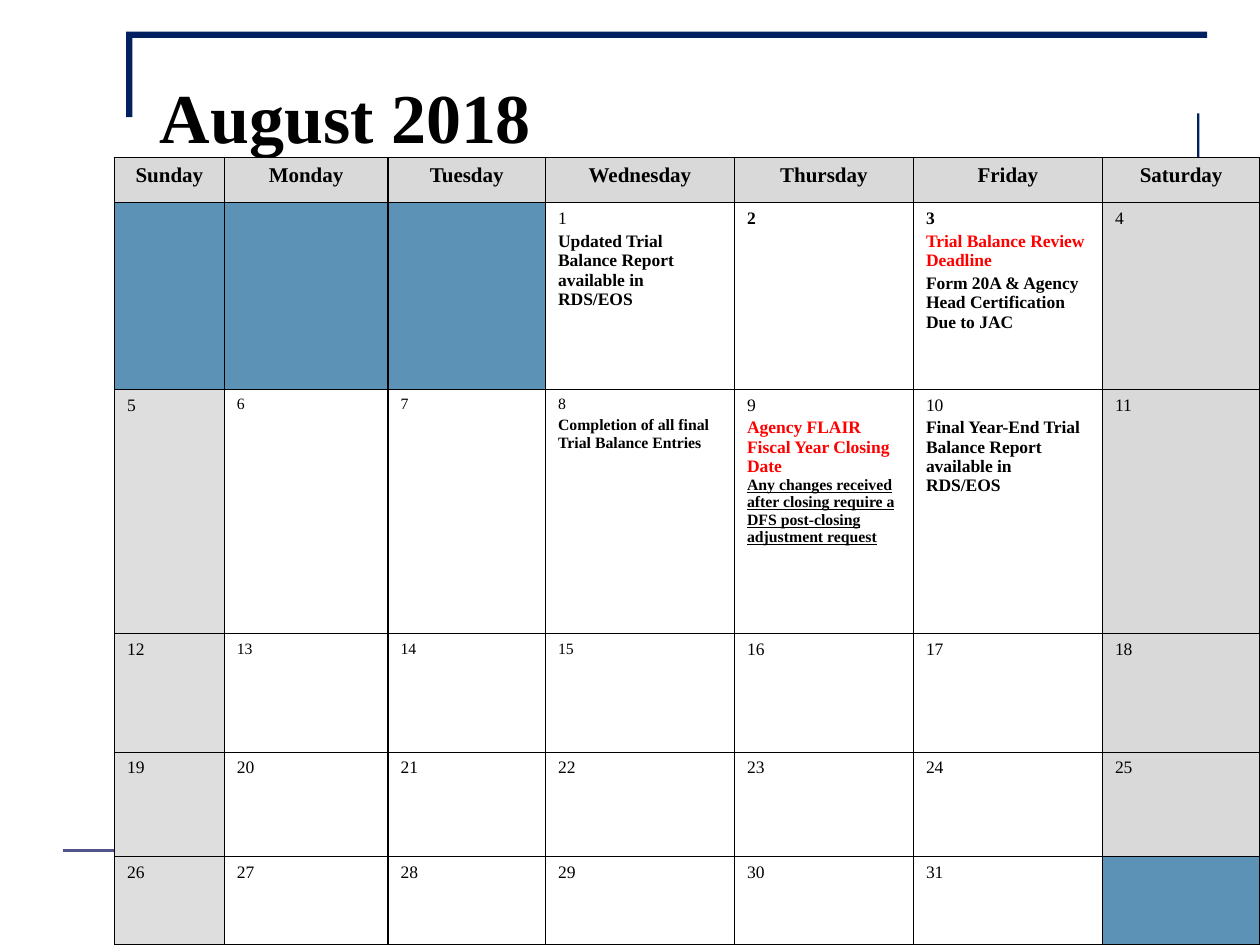
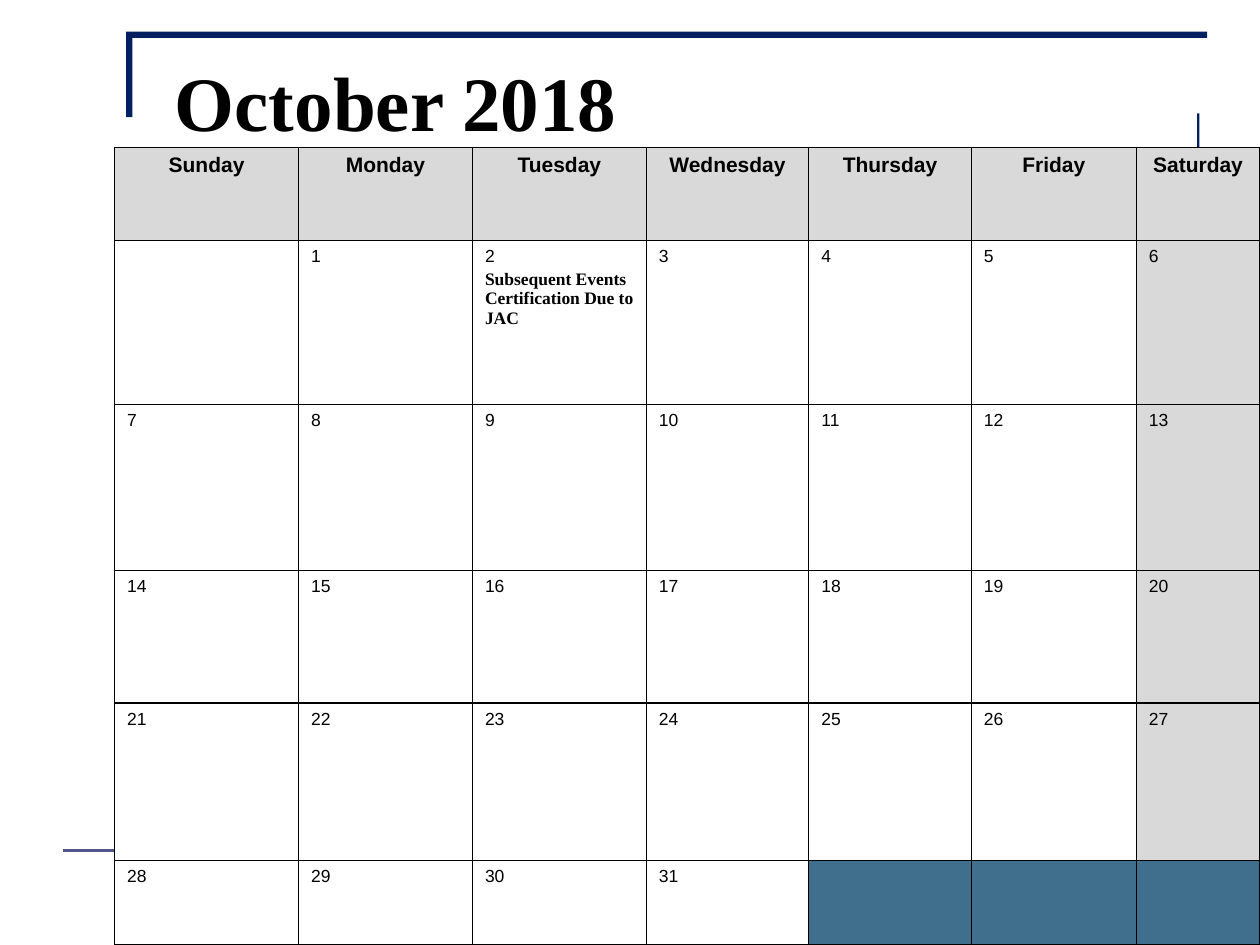
import pptx
import pptx.util
import pptx.dml.color
import pptx.enum.shapes
import pptx.enum.text
import pptx.oxml
import pptx.oxml.ns

Inches = pptx.util.Inches
Pt = pptx.util.Pt

COLORS = {
    "black": "000000", "white": "FFFFFF", "red": "FF0000",
    "navy": "002060", "footer": "53548A",
    "grey": "D9D9D9", "light grey": "DEDEDE",
    "blue": "5C92B5", "dark blue": "406F8D",
}
SERIF, SANS = "Times New Roman", "Arial"
WEEKDAYS = ["Sunday", "Monday", "Tuesday", "Wednesday", "Thursday", "Friday", "Saturday"]

# left, top, width, height of the bars behind the calendar
FRAME_BARS = [
    (0.94, 1.54, 8.58, 0.02),
    (1, 0.25, 8.58, 0.05),
    (1, 0.26, 0.05, 0.67),
    (9.5, 0.9, 0.02, 0.67),
]

# Events by day: text, size, color, underline, space before
MONTHS = [
    {
        "title": "August 2018", "title_size": 40, "title_box": (1.17, 0.42, 8.42, 1),
        "top": 1.25, "font": SERIF, "first_column": 3, "days": 31,
        "columns": [0.87, 1.3, 1.25, 1.5, 1.42, 1.5, 1.25],
        "rows": [0.36, 1.48, 1.94, 0.94, 0.83, 0.7],
        "sunday": "light grey", "before": "blue", "after": "blue",
        "bold_days": {2, 3}, "small_days": {6, 7, 8, 13, 14, 15},
        "events": {
            1: [("Updated Trial Balance Report available in RDS/EOS", 10, "black", False, 2)],
            3: [("Trial Balance Review Deadline", 10, "red", False, 2),
                ("Form 20A & Agency Head Certification Due to JAC", 10, "black", False, 2)],
            8: [("Completion of all final Trial Balance Entries", 9, "black", False, 2)],
            9: [("Agency FLAIR Fiscal Year Closing Date", 10, "red", False, 2),
                ("Any changes received after closing require a DFS post-closing "
                 "adjustment request", 9, "black", True, 0)],
            10: [("Final Year-End Trial Balance Report available in RDS/EOS",
                  10, "black", False, 2)],
        },
    },
    {
        "title": "October 2018", "title_size": 44, "title_box": (1.29, 0.42, 8.42, 0.75),
        "top": 1.17, "font": SANS, "first_column": 1, "days": 31,
        "columns": [1.46, 1.38, 1.38, 1.29, 1.29, 1.31, 0.98],
        "rows": [0.74, 1.3, 1.32, 1.05, 1.25, 0.67],
        "sunday": "white", "before": "white", "after": "dark blue",
        "bold_days": set(), "small_days": set(),
        "events": {
            2: [("Subsequent Events Certification Due to JAC", 10, "black", False, 2)],
        },
    },
]


def rgb(name):
    return pptx.dml.color.RGBColor.from_string(COLORS[name])


def write(paragraph, text, font_name, size, bold, color="black"):
    paragraph.text = text
    paragraph.font.name = font_name
    paragraph.font.size = Pt(size)
    paragraph.font.bold = bold
    paragraph.font.color.rgb = rgb(color)


presentation = pptx.Presentation()
presentation.slide_width = Inches(10)
presentation.slide_height = Inches(7.5)

for month in MONTHS:
    slide = presentation.slides.add_slide(presentation.slide_layouts[6])

    # Frame and footer line
    footer_line = slide.shapes.add_connector(
        pptx.enum.shapes.MSO_CONNECTOR.STRAIGHT,
        Inches(0.5), Inches(6.75), Inches(9.5), Inches(6.75))
    footer_line.line.color.rgb = rgb("footer")
    footer_line.line.width = Pt(1.5)
    footer_line._element.spPr.append(pptx.oxml.parse_xml(
        f"<a:effectLst {pptx.oxml.ns.nsdecls('a')}/>"))
    for box in FRAME_BARS:
        bar = slide.shapes.add_shape(
            pptx.enum.shapes.MSO_SHAPE.RECTANGLE, *map(Inches, box))
        bar.shadow.inherit = False
        bar.fill.solid()
        bar.fill.fore_color.rgb = rgb("navy")
        bar.line.fill.background()

    # Title
    title = slide.shapes.add_textbox(*map(Inches, month["title_box"])).text_frame
    title.word_wrap = True
    title.vertical_anchor = pptx.enum.text.MSO_ANCHOR.MIDDLE
    write(title.paragraphs[0], month["title"], SERIF, month["title_size"], True)

    # Calendar
    table = slide.shapes.add_table(
        len(month["rows"]), len(WEEKDAYS), Inches(0.91), Inches(month["top"]),
        Inches(sum(month["columns"])), Inches(sum(month["rows"]))).table
    table.first_row = False
    table.horz_banding = False
    for column, width in zip(table.columns, month["columns"]):
        column.width = Inches(width)
    for row, height in zip(table.rows, month["rows"]):
        row.height = Inches(height)

    for row_index in range(len(month["rows"])):
        for column_index, weekday in enumerate(WEEKDAYS):
            cell = table.cell(row_index, column_index)
            paragraph = cell.text_frame.paragraphs[0]
            day = (row_index - 1) * 7 + column_index - month["first_column"] + 1

            if row_index == 0:
                fill = "grey"
                write(paragraph, weekday, month["font"], 12, True)
                paragraph.alignment = pptx.enum.text.PP_ALIGN.CENTER
            elif day < 1:
                fill = month["before"]
            elif day > month["days"]:
                fill = month["after"]
            else:
                fill = {"Sunday": month["sunday"], "Saturday": "grey"}.get(weekday, "white")
                write(paragraph, str(day), month["font"],
                      9 if day in month["small_days"] else 10, day in month["bold_days"])
                for text, size, color, underline, space in month["events"].get(day, []):
                    event = cell.text_frame.add_paragraph()
                    write(event, text, SERIF, size, True, color)
                    event.font.underline = underline
                    event.space_before = Pt(space)

            cell_properties = cell._tc.get_or_add_tcPr()
            for side in "LRTB":
                cell_properties.append(pptx.oxml.parse_xml(
                    f"<a:ln{side} {pptx.oxml.ns.nsdecls('a')} w='{Pt(0.75)}'><a:solidFill>"
                    f"<a:srgbClr val='{COLORS['black']}'/></a:solidFill></a:ln{side}>"))
            cell.fill.solid()
            cell.fill.fore_color.rgb = rgb(fill)

presentation.save("out.pptx")
